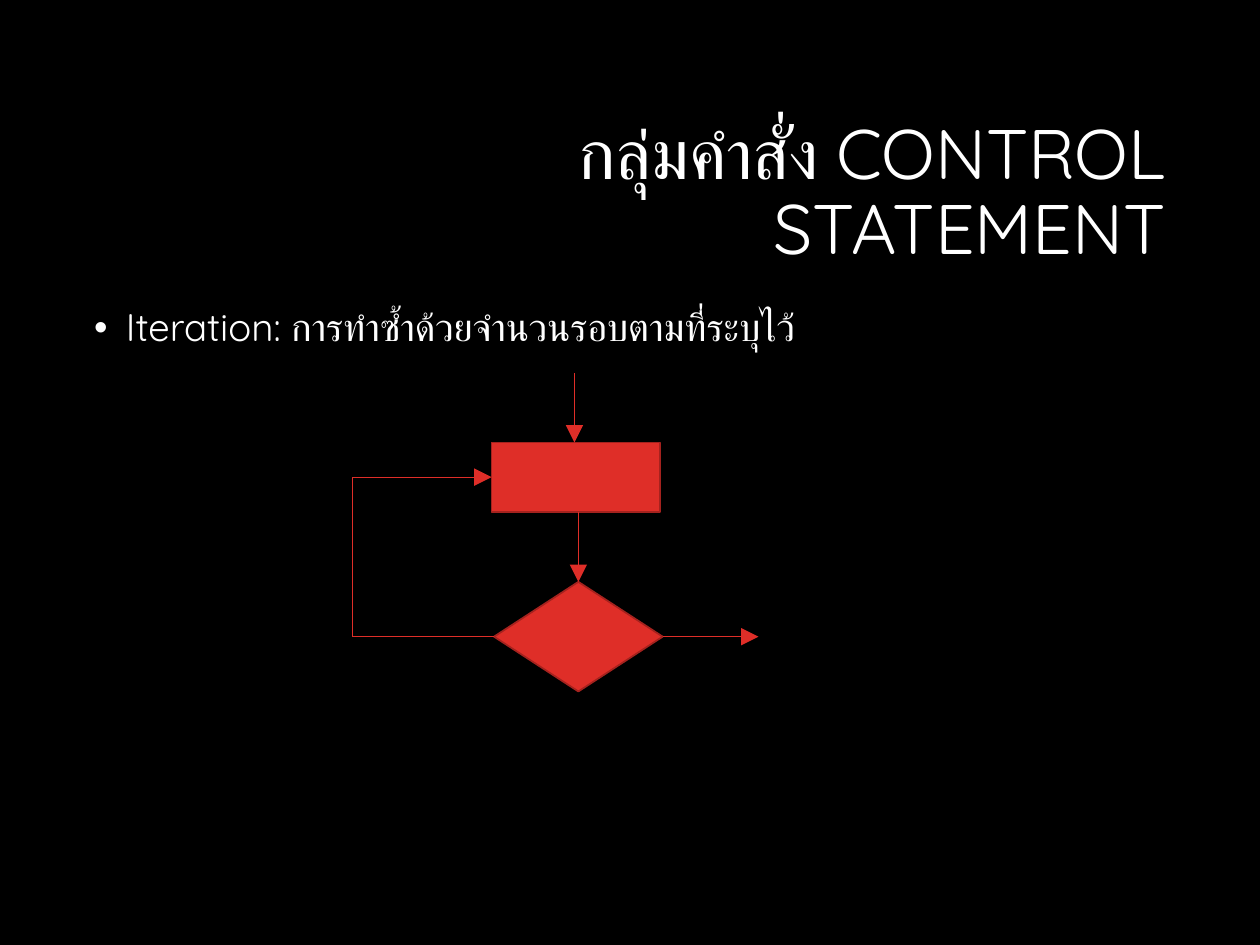
from dataclasses import dataclass

from lxml import etree
from pptx import Presentation
from pptx.dml.color import RGBColor as RGB
from pptx.enum.shapes import MSO_CONNECTOR as CONN, MSO_SHAPE as SHAPE
from pptx.enum.text import MSO_ANCHOR as ANCHOR, MSO_AUTO_SIZE as AUTO, PP_ALIGN as ALIGN
from pptx.oxml.ns import qn
from pptx.util import Cm, Pt


@dataclass(frozen=True)
class Theme:
    back: RGB = RGB(0x00, 0x00, 0x00)
    text: RGB = RGB(0xFF, 0xFF, 0xFF)
    accent: RGB = RGB(0xDF, 0x2E, 0x28)
    edge: RGB = RGB(0xA5, 0x22, 0x1E)
    font: str = "Quicksand"
    title_size: Pt = Pt(40)
    body_size: Pt = Pt(22)
    edge_width: Pt = Pt(1)
    flow_width: Pt = Pt(0.75)


theme = Theme()


def set_text(sp, text, size):
    tf = sp.text_frame
    tf.word_wrap = True
    tf.auto_size = AUTO.NONE
    tf.text = text
    p = tf.paragraphs[0]
    p.line_spacing = 0.9
    font = p.runs[0].font
    font.name, font.size = theme.font, size
    font.color.rgb = theme.text
    return p


def add_flow(x1, y1, x2, y2, arrow=True):
    line = slide.shapes.add_connector(CONN.STRAIGHT, Cm(x1), Cm(y1), Cm(x2), Cm(y2))
    line.line.color.rgb = theme.accent
    line.line.width = theme.flow_width
    if arrow:
        etree.SubElement(line.line._get_or_add_ln(), qn("a:tailEnd"),
                         type="triangle", w="lg", len="lg")
    etree.SubElement(line._element.spPr, qn("a:effectLst"))


prs = Presentation()
prs.slide_width, prs.slide_height = Cm(25.4), Cm(19.05)
slide = prs.slides.add_slide(prs.slide_layouts[5])
slide.background.fill.solid()
slide.background.fill.fore_color.rgb = theme.back

# Title
title = slide.shapes.title
title.left, title.top, title.width, title.height = Cm(6.05), Cm(2.13), Cm(17.7), Cm(3.58)
p = set_text(title, "กลุ่มคำสั่ง CONTROL STATEMENT", theme.title_size)
p.alignment = ALIGN.RIGHT
title.text_frame.vertical_anchor = ANCHOR.MIDDLE

# Bullet
body = slide.shapes.add_textbox(Cm(1.65), Cm(6.1), Cm(22.1), Cm(11.3))
p = set_text(body, "Iteration: การทำซ้ำด้วยจำนวนรอบตามที่ระบุไว้", theme.body_size)
pPr = p._p.get_or_add_pPr()
pPr.set("marL", str(Cm(0.64)))
pPr.set("indent", str(-Cm(0.64)))
etree.SubElement(pPr, qn("a:buFont"), typeface="Arial")
etree.SubElement(pPr, qn("a:buChar"), char="•")

# Loop condition and loop step
node_w = 3.4
step_x, step_y, step_h = 9.91, 8.92, 1.4
test_x, test_y, test_h = 9.96, 11.73, 2.21
for kind, x, y, h in (
    (SHAPE.FLOWCHART_DECISION, test_x, test_y, test_h),
    (SHAPE.FLOWCHART_PROCESS, step_x, step_y, step_h),
):
    sp = slide.shapes.add_shape(kind, Cm(x), Cm(y), Cm(node_w), Cm(h))
    sp.shadow.inherit = False
    sp.fill.solid()
    sp.fill.fore_color.rgb = theme.accent
    sp.line.color.rgb = theme.edge
    sp.line.width = theme.edge_width

# Flow lines
back_x = 7.11
step_mid = step_y + step_h / 2
test_mid = test_y + test_h / 2
center = test_x + node_w / 2
entry_x = 11.58
add_flow(center, step_y + step_h, center, test_y)
add_flow(back_x, step_mid, back_x, test_mid, arrow=False)
add_flow(test_x + node_w, test_mid, 15.29, test_mid)
add_flow(back_x, test_mid, test_x, test_mid, arrow=False)
add_flow(back_x, step_mid, step_x, step_mid)
add_flow(entry_x, 7.52, entry_x, step_y)

prs.save("out.pptx")
